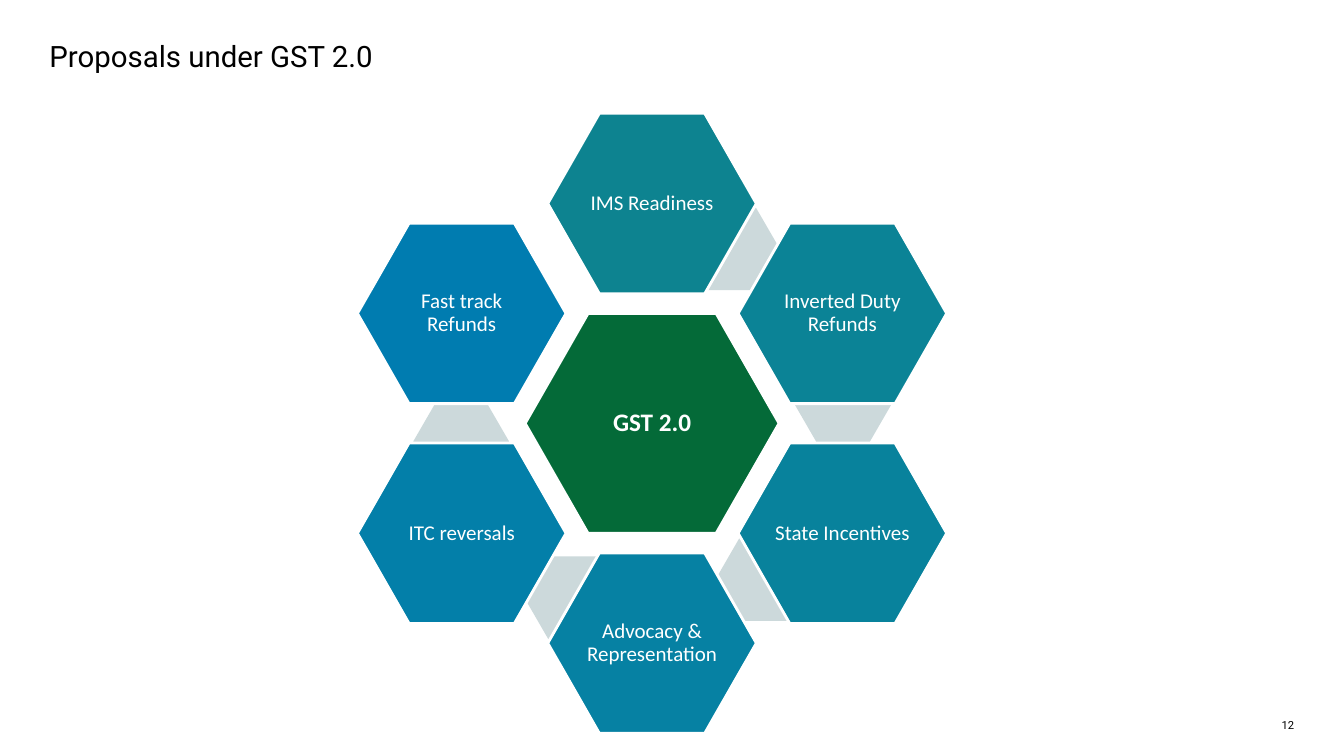
from math import cos, radians, sin

from pptx import Presentation
from pptx.dml.color import RGBColor
from pptx.enum.shapes import MSO_SHAPE
from pptx.enum.text import MSO_ANCHOR, PP_ALIGN
from pptx.util import Pt

HEXAGON = MSO_SHAPE.HEXAGON
MIDDLE = MSO_ANCHOR.MIDDLE
LEFT, RIGHT, CENTER = PP_ALIGN.LEFT, PP_ALIGN.RIGHT, PP_ALIGN.CENTER

MID_X, MID_Y = 465.8, 302.4
NODE_RING, LINK_RING = 157, 137
LINK_TURN = 24.6
STEP = 60
WHITE, BLACK, GREEN, GREY = "FFFFFF", "000000", "046A38", "CCD9DB"
NODES = [
    ("IMS Readiness", "0D8390"),
    ("Inverted Duty Refunds", "0B8396"),
    ("State Incentives", "08829C"),
    ("Advocacy & Representation", "0681A3"),
    ("ITC reversals", "037FA9"),
    ("Fast track Refunds", "007CB0"),
]


def color(code):
    return RGBColor.from_string(code)


def write(shape, text, size, face, code, align, inset=0, bold=False):
    frame = shape.text_frame
    frame.word_wrap = True
    frame.margin_left = frame.margin_right = Pt(inset)
    frame.margin_top = frame.margin_bottom = Pt(inset)
    para = frame.paragraphs[0]
    para.text = text
    para.alignment = align
    font = para.runs[0].font
    font.size, font.name, font.bold = Pt(size), face, bold
    font.color.rgb = color(code)
    return para


def add_label(slide, text, left, top, width, height, size, align=LEFT):
    box = slide.shapes.add_textbox(Pt(left), Pt(top), Pt(width), Pt(height))
    write(box, text, size, "Roboto", BLACK, align)


def add_hex(slide, x, y, width, height, fill, slant):
    shape = slide.shapes.add_shape(
        HEXAGON, Pt(x - width / 2), Pt(y - height / 2), Pt(width), Pt(height))
    shape.adjustments[0] = slant
    shape.shadow.inherit = False
    shape.fill.solid()
    shape.fill.fore_color.rgb = color(fill)
    shape.line.fill.background()
    return shape


def add_node(slide, text, x, y, width, height, fill, size, bold=False):
    shape = add_hex(slide, x, y, width, height, fill, 0.286)
    shape.line.color.rgb = color(WHITE)
    shape.line.width = Pt(2)
    shape.text_frame.vertical_anchor = MIDDLE
    para = write(shape, text, size, "Calibri", WHITE, CENTER, 1.5, bold)
    para.line_spacing = 0.9


def place(ring, angle):
    turn = radians(angle)
    return MID_X + ring * sin(turn), MID_Y - ring * cos(turn)


def add_wheel(slide):
    add_node(slide, "GST 2.0", MID_X, MID_Y, 181.4, 157, GREEN, 18, True)
    for i, (text, fill) in enumerate(NODES):
        angle = i * STEP
        if i < len(NODES) - 1:
            x, y = place(LINK_RING, angle + LINK_TURN)
            add_hex(slide, x, y, 68.4, 59, GREY, 0.289)
        x, y = place(NODE_RING, angle)
        add_node(slide, text, x, y, 149, 128.9, fill, 15)


def main():
    deck = Presentation()
    deck.slide_width, deck.slide_height = Pt(960), Pt(540)
    slide = deck.slides.add_slide(deck.slide_layouts[6])
    add_label(slide, "12", 900, 513.4, 24.5, 9.4, 8, RIGHT)
    add_label(slide, "Proposals under GST 2.0", 35.3, 27.4, 890, 26.6, 21)
    add_wheel(slide)
    deck.save("out.pptx")


if __name__ == "__main__":
    main()
